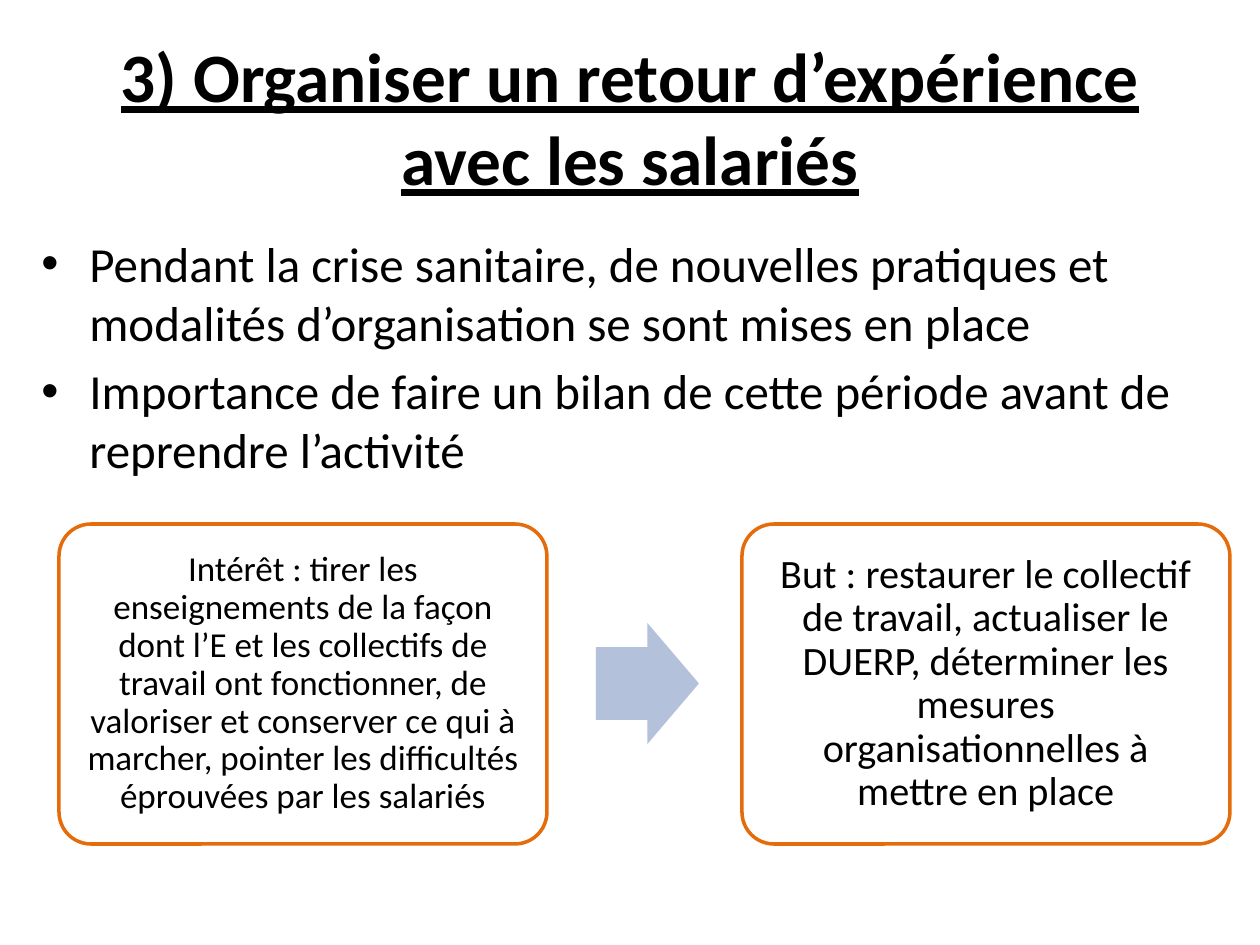
from lxml import etree
from pptx import Presentation
from pptx.dml.color import RGBColor
from pptx.enum.shapes import MSO_SHAPE
from pptx.enum.text import MSO_ANCHOR, PP_ALIGN
from pptx.oxml.ns import qn
from pptx.util import Emu, Pt

ROUNDED, ARROW = MSO_SHAPE.ROUNDED_RECTANGLE, MSO_SHAPE.RIGHT_ARROW
TOP, MIDDLE = MSO_ANCHOR.TOP, MSO_ANCHOR.MIDDLE
LEFT, CENTER = PP_ALIGN.LEFT, PP_ALIGN.CENTER

EMU_PER_PX = 914400 // 126
COLORS = {"text": "000000", "card": "FFFFFF", "border": "E46C0A", "arrow": "B3C1DB"}
FONT = "Calibri"

TITLE = "3) Organiser un retour d’expérience avec les salariés"
POINTS = [
    "Pendant la crise sanitaire, de nouvelles pratiques et modalités "
    "d’organisation se sont mises en place",
    "Importance de faire un bilan de cette période avant de reprendre l’activité",
]
INTEREST = (
    "Intérêt : tirer les enseignements de la façon dont l’E et les collectifs "
    "de travail ont fonctionner, de valoriser et conserver ce qui à marcher, "
    "pointer les difficultés éprouvées par les salariés"
)
GOAL = (
    "But : restaurer le collectif de travail, actualiser le DUERP, déterminer "
    "les mesures organisationnelles à mettre en place"
)


def px(length):
    return Emu(length * EMU_PER_PX)


def color(name):
    return RGBColor.from_string(COLORS[name])


def set_attributes(target, values):
    for name, value in values.items():
        setattr(target, name, value)


def write(frame, texts, frame_format, paragraph_format, font_format):
    """Fill a text frame with one paragraph for each text."""
    set_attributes(frame, {"word_wrap": True, **frame_format})
    for index, text in enumerate(texts):
        paragraph = frame.add_paragraph() if index else frame.paragraphs[0]
        set_attributes(paragraph, paragraph_format)
        run = paragraph.add_run()
        run.text = text
        set_attributes(run.font, {"name": FONT, **font_format})
        run.font.color.rgb = color("text")


def add_bullet(paragraph, indent):
    properties = paragraph._p.get_or_add_pPr()
    properties.set("marL", str(px(indent)))
    properties.set("indent", str(-px(indent)))
    etree.SubElement(properties, qn("a:buFont")).set("typeface", "Arial")
    etree.SubElement(properties, qn("a:buChar")).set("char", "•")


def add_title(slide, box):
    frame = slide.shapes.add_textbox(*map(px, box)).text_frame
    write(frame, [TITLE], {"vertical_anchor": MIDDLE}, {"alignment": CENTER},
          {"size": Pt(39.6), "bold": True, "underline": True})


def add_points(slide, box):
    frame = slide.shapes.add_textbox(*map(px, box)).text_frame
    write(frame, POINTS, {"vertical_anchor": TOP},
          {"alignment": LEFT, "space_before": Pt(5.6)}, {"size": Pt(28)})
    for paragraph in frame.paragraphs:
        add_bullet(paragraph, 48)


def add_filled_shape(slide, preset, box, fill, adjustments):
    shape = slide.shapes.add_shape(preset, *map(px, box))
    shape.shadow.inherit = False
    shape.fill.solid()
    shape.fill.fore_color.rgb = color(fill)
    for index, value in enumerate(adjustments):
        shape.adjustments[index] = value
    return shape


def add_card(slide, box, text, size, inset):
    card = add_filled_shape(slide, ROUNDED, box, "card", [0.1])
    card.line.color.rgb = color("border")
    card.line.width = Pt(2)
    margins = {f"margin_{side}": px(inset) for side in ("left", "top", "right", "bottom")}
    write(card.text_frame, [text], {"vertical_anchor": MIDDLE, **margins},
          {"alignment": CENTER, "line_spacing": 0.9}, {"size": Pt(size)})


def add_process(slide, box):
    """Place two cards at the ends of the box, with an arrow between them."""
    left, top, width, height = box
    card_width, arrow_width, arrow_height = 488, 103, 121
    gap = 49
    add_card(slide, (left, top, card_width, height), INTEREST, 20, 10)
    arrow_box = (left + card_width + gap, top + (height - arrow_height) // 2,
                 arrow_width, arrow_height)
    arrow = add_filled_shape(slide, ARROW, arrow_box, "arrow", [0.6, 0.5])
    arrow.line.fill.background()
    add_card(slide, (left + width - card_width, top, card_width, height), GOAL, 23, 12)


def main():
    presentation = Presentation()
    presentation.slide_width, presentation.slide_height = px(1260), px(945)
    slide = presentation.slides.add_slide(presentation.slide_layouts[6])
    add_title(slide, (63, 38, 1134, 157))
    add_points(slide, (29, 227, 1201, 272))
    add_process(slide, (59, 524, 1171, 320))
    presentation.save("out.pptx")


if __name__ == "__main__":
    main()
